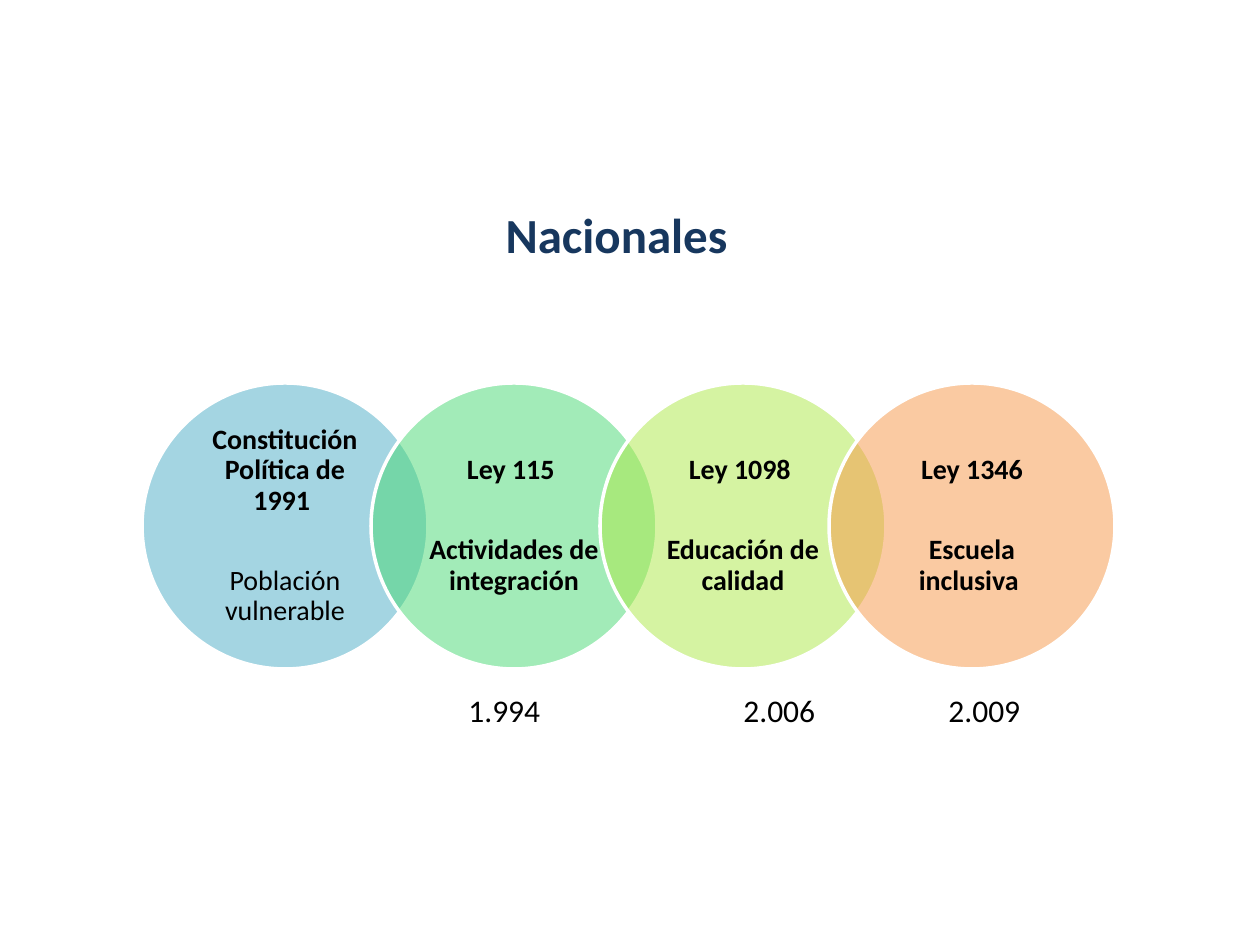
from pptx import Presentation
from pptx.dml.color import RGBColor
from pptx.enum.shapes import MSO_SHAPE
from pptx.enum.text import MSO_ANCHOR, MSO_AUTO_SIZE, PP_ALIGN
from pptx.oxml.ns import qn
from pptx.util import Pt
from lxml import etree

OVAL = MSO_SHAPE.OVAL
TOP, MIDDLE = MSO_ANCHOR.TOP, MSO_ANCHOR.MIDDLE
LEFT, CENTER = PP_ALIGN.LEFT, PP_ALIGN.CENTER
NO_FIT = MSO_AUTO_SIZE.NONE

TITLE = "Nacionales"
LAWS = [
    ("Constitución Política de 1991 ", "Población vulnerable", False, "4BACC6"),
    ("Ley 115 ", "Actividades de integración", True, "47D872"),
    ("Ley 1098 ", "Educación de calidad", True, "ACE946"),
    ("Ley 1346", "Escuela inclusiva ", True, "F79646"),
]
YEARS = [("1.994", 456), ("2.006", 731), ("2.009", 936)]

THEME = {
    "font": "Calibri", "title": "17375E", "text": "000000", "ring": "FFFFFF",
    "title_size": 28, "law_size": 16, "year_size": 18,
    "ring_width": 2, "opacity": 50, "law_gap": 28.5,
}

SLIDE_W, SLIDE_H = 1260, 945
CIRCLE_X, CIRCLE_Y, DIAMETER, PITCH = 142, 383, 286, 229
INSET = 42
TITLE_BOX = (493, 198, 272, 72)
YEAR_Y, YEAR_W, YEAR_H = 685, 110, 50
PAD_X, PAD_Y = 15, 3


def px(n):
    return round(n * 914400 / 126)


def box(*lengths):
    return [px(n) for n in lengths]


def apply(obj, values):
    for name, value in values.items():
        setattr(obj, name, value)


def write(p, text, size, color, bold=False, **layout):
    apply(p, layout)
    r = p.add_run()
    r.text = text
    apply(r.font, {"name": THEME["font"], "size": Pt(size), "bold": bold})
    r.font.color.rgb = RGBColor.from_string(color)


def add_circle(shapes, x, color):
    sp = shapes.add_shape(OVAL, *box(x, CIRCLE_Y, DIAMETER, DIAMETER))
    sp.shadow.inherit = False
    sp.fill.solid()
    sp.fill.fore_color.rgb = RGBColor.from_string(color)
    clr = sp.fill._xPr.find(qn("a:solidFill"))[0]
    etree.SubElement(clr, qn("a:alpha"), val=str(THEME["opacity"] * 1000))
    sp.line.color.rgb = RGBColor.from_string(THEME["ring"])
    sp.line.width = Pt(THEME["ring_width"])


def add_law(shapes, x, law, topic, topic_bold):
    side = DIAMETER - 2 * INSET
    tf = shapes.add_textbox(*box(x + INSET, CIRCLE_Y + INSET, side, side)).text_frame
    apply(tf, {
        "word_wrap": True, "vertical_anchor": MIDDLE,
        "margin_left": px(PAD_X), "margin_right": px(PAD_X),
        "margin_top": px(PAD_Y), "margin_bottom": px(PAD_Y),
    })
    style = {"size": THEME["law_size"], "color": THEME["text"],
             "alignment": CENTER, "line_spacing": 0.9}
    write(tf.paragraphs[0], law, bold=True, **style)
    write(tf.add_paragraph(), topic, bold=topic_bold,
          space_before=Pt(THEME["law_gap"]), **style)


def main():
    prs = Presentation()
    prs.slide_width, prs.slide_height = box(SLIDE_W, SLIDE_H)
    slide = prs.slides.add_slide(prs.slide_layouts[5])
    shapes = slide.shapes

    title = shapes.title
    apply(title, dict(zip(("left", "top", "width", "height"), box(*TITLE_BOX))))
    tf = title.text_frame
    apply(tf, {"word_wrap": True, "vertical_anchor": TOP, "auto_size": NO_FIT})
    write(tf.paragraphs[0], TITLE, THEME["title_size"], THEME["title"],
          bold=True, alignment=LEFT)

    for i, (law, topic, topic_bold, color) in enumerate(LAWS):
        x = CIRCLE_X + i * PITCH
        add_circle(shapes, x, color)
        add_law(shapes, x, law, topic, topic_bold)

    for year, x in YEARS:
        tf = shapes.add_textbox(*box(x, YEAR_Y, YEAR_W, YEAR_H)).text_frame
        tf.word_wrap = True
        write(tf.paragraphs[0], year, THEME["year_size"], THEME["text"])

    prs.save("out.pptx")


if __name__ == "__main__":
    main()
